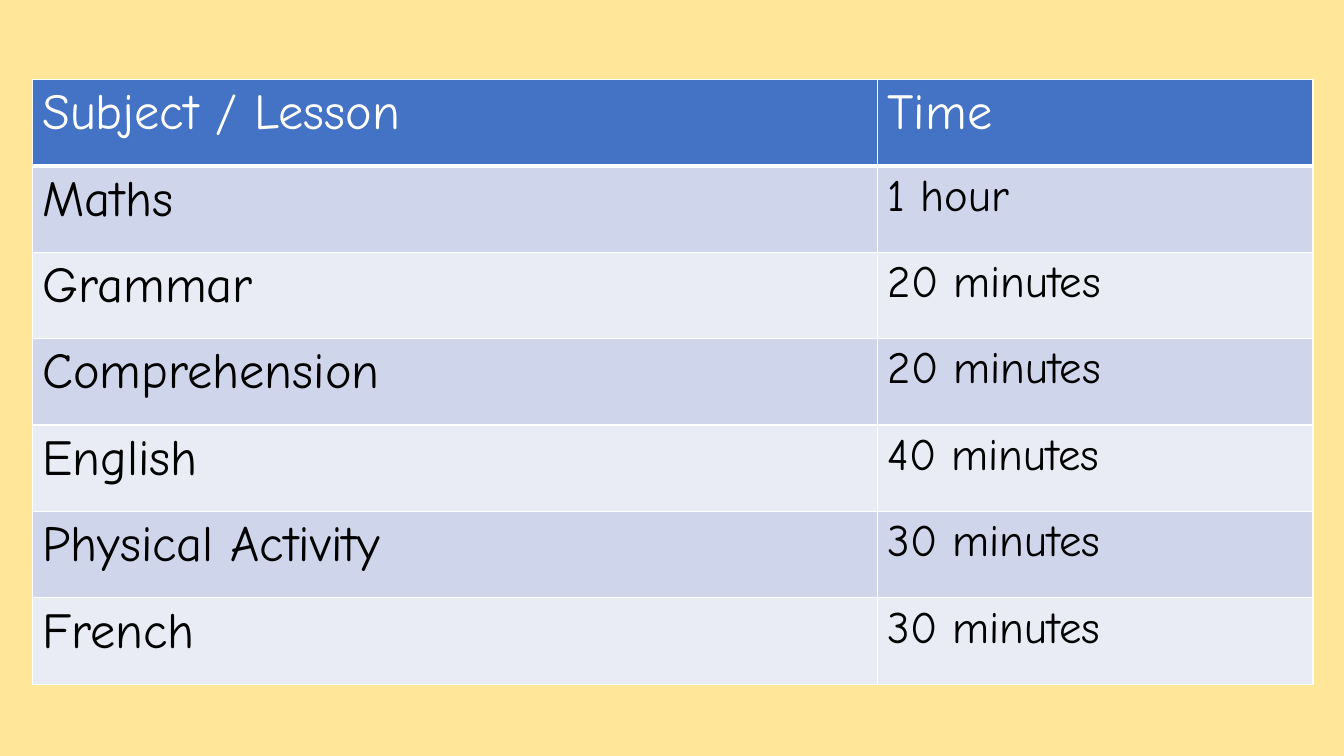
from lxml import etree
from pptx import Presentation
from pptx.dml.color import RGBColor
from pptx.oxml.ns import qn
from pptx.util import Inches, Pt

SLIDE_WIDTH, SLIDE_HEIGHT = Inches(13.33), Inches(7.5)
LESSONS = [
    ("Subject / Lesson", "Time"),
    ("Maths", "1 hour"),
    ("Grammar", "20 minutes"),
    ("Comprehension", "20 minutes"),
    ("English", "40 minutes"),
    ("Physical Activity", "30 minutes"),
    ("French", "30 minutes"),
]


def colour(hex_value):
    return RGBColor.from_string(hex_value)


class TimetableSlide:
    font = "Comic Neue"
    background = "FFE699"
    header_fill = "4472C4"
    band_fills = ("E9EBF5", "CFD5EA")
    header_text, body_text = "FFFFFF", "000000"
    border = "FFFFFF"
    large, small = 36, 32

    def __init__(self, deck):
        self.slide = deck.slides.add_slide(deck.slide_layouts[6])
        fill = self.slide.background.fill
        fill.solid()
        fill.fore_color.rgb = colour(self.background)

    def timetable(self, lessons, left, top, width, height, column_shares):
        table = self.slide.shapes.add_table(
            len(lessons), len(column_shares),
            round(left * SLIDE_WIDTH), round(top * SLIDE_HEIGHT),
            round(width * SLIDE_WIDTH), round(height * SLIDE_HEIGHT),
        ).table
        for column, share in zip(table.columns, column_shares):
            column.width = round(share * width * SLIDE_WIDTH)
        for row, lesson in enumerate(lessons):
            for column, wording in enumerate(lesson):
                self.entry(table.cell(row, column), wording, row == 0,
                           self.band_fills[row % 2], column == 0)

    def entry(self, cell, wording, is_header, band_fill, is_subject):
        cell.fill.solid()
        cell.fill.fore_color.rgb = colour(self.header_fill if is_header else band_fill)
        run = cell.text_frame.paragraphs[0].add_run()
        run.text = wording
        run.font.name = self.font
        run.font.bold = False
        run.font.size = Pt(self.large if is_header or is_subject else self.small)
        run.font.color.rgb = colour(self.header_text if is_header else self.body_text)
        self.borders(cell, bottom=3 if is_header else 1)

    def borders(self, cell, bottom):
        properties = cell._tc.get_or_add_tcPr()
        sides = (("a:lnL", 1), ("a:lnR", 1), ("a:lnT", 1), ("a:lnB", bottom))
        for position, (side, points) in enumerate(sides):
            line = etree.Element(qn(side), w=str(Pt(points)))
            paint = etree.SubElement(line, qn("a:solidFill"))
            etree.SubElement(paint, qn("a:srgbClr"), val=self.border)
            properties.insert(position, line)


def main():
    deck = Presentation()
    deck.slide_width, deck.slide_height = SLIDE_WIDTH, SLIDE_HEIGHT
    page = TimetableSlide(deck)
    page.timetable(LESSONS, left=0.024, top=0.105, width=0.953, height=0.8,
                   column_shares=(0.66, 0.34))
    deck.save("out.pptx")


if __name__ == "__main__":
    main()
